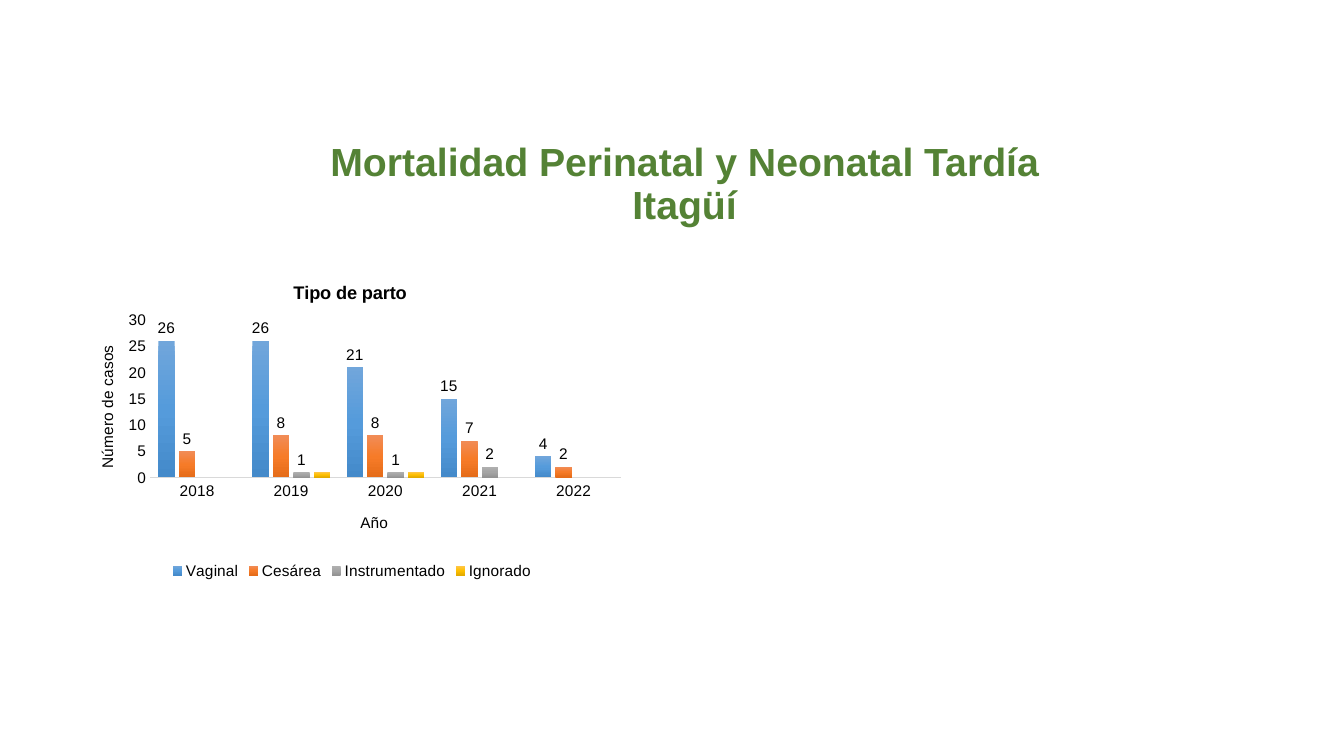
from copy import deepcopy

from lxml import etree
from pptx import Presentation
from pptx.chart.data import CategoryChartData
from pptx.dml.color import RGBColor
from pptx.enum.chart import XL_CHART_TYPE, XL_LABEL_POSITION, XL_LEGEND_POSITION, XL_TICK_MARK
from pptx.enum.text import MSO_ANCHOR, MSO_AUTO_SIZE, PP_ALIGN
from pptx.oxml.ns import qn
from pptx.util import Inches, Pt

COLUMN = XL_CHART_TYPE.COLUMN_CLUSTERED
OUTSIDE = XL_LABEL_POSITION.OUTSIDE_END
BOTTOM = XL_LEGEND_POSITION.BOTTOM
NO_TICK = XL_TICK_MARK.NONE
CENTER = PP_ALIGN.CENTER
LOW = MSO_ANCHOR.BOTTOM
FIXED = MSO_AUTO_SIZE.NONE

FONT = "Arial"
BLACK = "000000"
YEARS = ["2018", "2019", "2020", "2021", "2022"]
BIRTHS = [
    ("Vaginal", [26, 26, 21, 15, 4], ["71A6DB", "559BDB", "448ACA"], True),
    ("Cesárea", [5, 8, 8, 7, 2], ["F18C57", "F67B28", "E56C19"], True),
    ("Instrumentado", [None, 1, 1, 2, None], ["AFAFAF", "A5A5A5", "939393"], True),
    ("Ignorado", [None, 1, 1, None, None], ["FFC64B", "FFC000", "E3AB00"], False),
]


def paint(code):
    return RGBColor.from_string(code)


def style(font, size=11, color=BLACK, bold=False):
    font.name = FONT
    font.size = Pt(size)
    font.bold = bold
    font.color.rgb = paint(color)


def write(frame, text, spacing=None, **look):
    para = frame.paragraphs[0]
    para.text = text
    para.alignment = CENTER
    para.line_spacing = spacing
    for run in para.runs:
        style(run.font, **look)
    model = para.runs[0].font._element
    for gap in para._p.findall(qn("a:br")):
        gap.append(deepcopy(model))


def place(node, **parts):
    for old in node.findall(qn("c:layout")):
        node.remove(old)
    text = node.find(qn("c:tx"))
    layout = etree.Element(qn("c:layout"))
    node.insert(0 if text is None else 1, layout)
    manual = etree.SubElement(layout, qn("c:manualLayout"))
    if "w" in parts:
        etree.SubElement(manual, qn("c:layoutTarget"), val="inner")
    for key in ("x", "y"):
        etree.SubElement(manual, qn(f"c:{key}Mode"), val="edge")
    for key, value in parts.items():
        etree.SubElement(manual, qn(f"c:{key}"), val=str(value))


def blend(series, colors):
    fill = series.format.fill
    fill.gradient()
    fill.gradient_angle = 270
    stops = series._element.find(".//" + qn("a:gsLst"))
    stops.append(deepcopy(stops[0]))
    for index, (stop, color) in enumerate(zip(fill.gradient_stops, colors)):
        stop.color.rgb = paint(color)
        stop.position = index / 2


def label(series):
    labels = series.data_labels
    labels.show_value = True
    labels.position = OUTSIDE
    style(labels.font)


def set_axis(axis, text, x, y):
    write(axis.axis_title.text_frame, text)
    place(axis.axis_title._element, x=x, y=y)
    axis.has_major_gridlines = False
    axis.major_tick_mark = NO_TICK
    axis.minor_tick_mark = NO_TICK
    style(axis.tick_labels.font)


def add_title(slide, box):
    title = slide.shapes.title
    title.left, title.top, title.width, title.height = map(Inches, box)
    frame = title.text_frame
    frame.word_wrap = True
    frame.auto_size = FIXED
    frame.vertical_anchor = LOW
    write(frame, "Mortalidad Perinatal y Neonatal Tardía\nItagüí",
          spacing=0.9, size=28, color="548235", bold=True)


def add_births(slide, box):
    data = CategoryChartData()
    data.categories = YEARS
    for name, values, _, _ in BIRTHS:
        data.add_series(name, values)
    chart = slide.shapes.add_chart(COLUMN, *map(Inches, box), data).chart
    style(chart.font)
    write(chart.chart_title.text_frame, "Tipo de parto", size=13, bold=True)
    place(chart.chart_title._element, x=0.39, y=0.05)
    place(chart._chartSpace.chart.plotArea, x=0.14, y=0.18, w=0.84, h=0.49)

    set_axis(chart.category_axis, "Año", 0.51, 0.77)
    line = chart.category_axis.format.line
    line.color.rgb = paint("D9D9D9")
    line.width = Pt(1)
    cases = chart.value_axis
    set_axis(cases, "Número de casos", 0.04, 0.25)
    cases.format.line.fill.background()
    cases.minimum_scale, cases.maximum_scale, cases.major_unit = 0, 30, 5

    chart.has_legend = True
    chart.legend.position = BOTTOM
    chart.legend.include_in_layout = False
    style(chart.legend.font)

    plot = chart.plots[0]
    plot.gap_width = 100
    plot.overlap = -24
    plot.vary_by_categories = False
    for series, (_, _, colors, shown) in zip(plot.series, BIRTHS):
        blend(series, colors)
        if shown:
            label(series)


def main():
    deck = Presentation()
    deck.slide_width = Inches(13.33)
    deck.slide_height = Inches(7.5)
    slide = deck.slides.add_slide(deck.slide_layouts[0])
    extra = slide.placeholders[1].element
    extra.getparent().remove(extra)
    add_title(slide, (1.55, 1.31, 10.48, 1))
    add_births(slide, (0.71, 2.6, 5.56, 3.19))
    deck.save("out.pptx")


if __name__ == "__main__":
    main()
